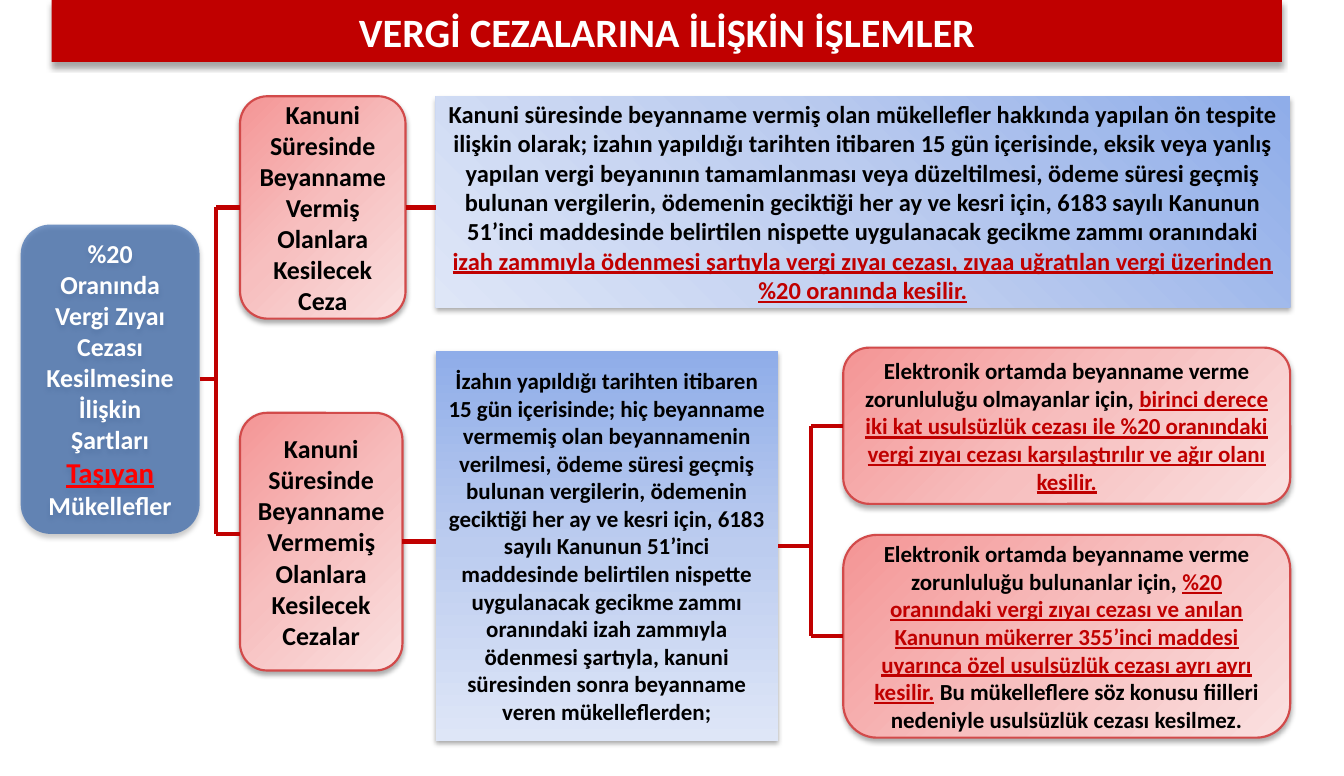
from copy import deepcopy

from lxml import etree
from pptx import Presentation
from pptx.dml.color import RGBColor
from pptx.enum import shapes, text
from pptx.oxml.ns import qn
from pptx.util import Inches, Pt

RED = RGBColor(0xC0, 0x00, 0x00)
BRIGHT_RED = RGBColor(0xFF, 0x00, 0x00)
STEEL = RGBColor(0x26, 0x5A, 0xA6)
PINK_EDGE = RGBColor(0xD2, 0x4A, 0x4A)
WHITE = RGBColor(0xFF, 0xFF, 0xFF)
BLACK = RGBColor(0x00, 0x00, 0x00)
PINKS = [RGBColor.from_string(c) for c in ("F49595", "F7BFBF", "FAE0E0")]
BLUES = [RGBColor.from_string(c) for c in ("8FADE9", "BCCCEF", "DEE6F7")]
RECT = shapes.MSO_SHAPE.RECTANGLE
ROUNDED = shapes.MSO_SHAPE.ROUNDED_RECTANGLE
LEFT, RIGHT = 1, 3
SOFT_SHADOW = (32, 3.5, 2.2)
TITLE_SHADOW = (35, 4, 3)


def add_child(parent, tag, **attributes):
    return etree.SubElement(parent, qn(tag), {k: str(v) for k, v in attributes.items()})


def add_shadow(shape, alpha, blur, distance):
    shape.shadow.inherit = False
    effects = shape._element.spPr.find(qn("a:effectLst"))
    shadow = add_child(effects, "a:outerShdw", blurRad=Pt(blur), dist=Pt(distance),
                       dir=90 * 60000, rotWithShape=0)
    color = add_child(shadow, "a:srgbClr", val=BLACK)
    add_child(color, "a:alpha", val=alpha * 1000)


def fill_gradient(shape, colors, angle):
    """Spread three colours evenly, with the angle measured clockwise."""
    shape.fill.gradient()
    shape.fill.gradient_angle = 360 - angle
    stops = shape._element.spPr.find(qn("a:gradFill")).find(qn("a:gsLst"))
    stops.insert(1, deepcopy(stops[0]))
    for i, (stop, color) in enumerate(zip(shape.fill.gradient_stops, colors)):
        stop.position = i / 2
        stop.color.rgb = color


def add_box(slide, kind, box, size, runs, color=BLACK, shadow=SOFT_SHADOW):
    """Runs are plain strings, or (text, colour, size) for underlined emphasis."""
    shape = slide.shapes.add_shape(kind, *map(Inches, box))
    shape.line.fill.background()
    add_shadow(shape, *shadow)
    frame = shape.text_frame
    frame.word_wrap = True
    frame.vertical_anchor = text.MSO_ANCHOR.MIDDLE
    paragraph = frame.paragraphs[0]
    paragraph.alignment = text.PP_ALIGN.CENTER
    paragraph.font.name = "Calibri"
    for item in runs:
        emphasized = not isinstance(item, str)
        wording, run_color, run_size = item if emphasized else (item, color, size)
        run = paragraph.add_run()
        run.text = wording
        run.font.name = "Calibri"
        run.font.bold = True
        run.font.size = Pt(run_size)
        run.font.color.rgb = run_color
        if emphasized:
            run.font.underline = True
    return shape


def pink_box(slide, box, size, *runs):
    shape = add_box(slide, ROUNDED, box, size, runs)
    fill_gradient(shape, PINKS, 45)
    shape.line.color.rgb = PINK_EDGE
    shape.line.width = Pt(1.5)
    return shape


def blue_box(slide, box, size, angle, *runs):
    shape = add_box(slide, RECT, box, size, runs)
    fill_gradient(shape, BLUES, angle)
    return shape


def middle(shape):
    return shape.top + shape.height // 2


def link(slide, start, end, source=None, target=None):
    line = slide.shapes.add_connector(shapes.MSO_CONNECTOR.STRAIGHT, *start, *end)
    line.line.color.rgb = RED
    line.line.width = Pt(3)
    add_child(line._element.spPr, "a:effectLst")
    if source is not None:
        line.begin_connect(source, RIGHT)
    if target is not None:
        line.end_connect(target, LEFT)


def link_across(slide, source, neighbour):
    y = middle(source)
    link(slide, (source.left + source.width, y), (neighbour.left, y), source)


def bracket(slide, source, spine, upper, lower, lower_y=None):
    """Join a source to two boxes; lower_y moves the lower branch off the middle."""
    spine, y = Inches(spine), middle(source)
    top = middle(upper)
    bottom = middle(lower) if lower_y is None else Inches(lower_y)
    link(slide, (spine, top), (spine, bottom))
    link(slide, (source.left + source.width, y), (spine, y), source)
    link(slide, (spine, top), (upper.left, top), target=upper)
    link(slide, (spine, bottom), (lower.left, bottom),
         target=lower if lower_y is None else None)


def title_bar(slide, box):
    bar = add_box(slide, RECT, box, 28, ["VERGİ CEZALARINA İLİŞKİN İŞLEMLER"],
                  WHITE, TITLE_SHADOW)
    bar.fill.solid()
    bar.fill.fore_color.rgb = RED


def taxpayers(slide, box):
    root = add_box(slide, ROUNDED, box, 18, [
        "%20 Oranında Vergi Zıyaı Cezası Kesilmesine İlişkin Şartları ",
        ("Taşıyan", BRIGHT_RED, 20), " Mükellefler"], WHITE)
    root.fill.solid()
    root.fill.fore_color.rgb = STEEL
    color = root._element.spPr.find(qn("a:solidFill"))[0]
    add_child(color, "a:alpha", val=63000)
    return root


def declared_on_time(slide, box):
    x, y, w, h = box
    penalty = pink_box(slide, (x, y, 1.6, h), 18,
                       "Kanuni Süresinde Beyanname Vermiş Olanlara Kesilecek Ceza")
    terms = blue_box(
        slide, (x + 1.89, y, w - 1.89, h - 0.11), 17, 135,
        "Kanuni süresinde beyanname vermiş olan mükellefler hakkında yapılan ön tespite "
        "ilişkin olarak; izahın yapıldığı tarihten itibaren 15 gün içerisinde, eksik veya "
        "yanlış yapılan vergi beyanının tamamlanması veya düzeltilmesi, ödeme süresi geçmiş "
        "bulunan vergilerin, ödemenin geciktiği her ay ve kesri için, 6183 sayılı Kanunun "
        "51’inci maddesinde belirtilen nispette uygulanacak gecikme zammı oranındaki ",
        ("izah zammıyla ödenmesi şartıyla vergi zıyaı cezası, zıyaa uğratılan vergi "
         "üzerinden %20 oranında kesilir.", RED, 17))
    link_across(slide, penalty, terms)
    return penalty


def not_declared(slide, box):
    x, y, w, h = box
    penalties = pink_box(slide, (x, y + 0.63, 1.57, 2.49), 18,
                         "Kanuni Süresinde Beyanname Vermemiş Olanlara Kesilecek Cezalar")
    penalties.text_frame.margin_left = penalties.text_frame.margin_right = Inches(0.07)
    terms = blue_box(
        slide, (x + 1.89, y + 0.03, 3.31, h - 0.03), 16, 90,
        "İzahın yapıldığı tarihten itibaren 15 gün içerisinde; hiç beyanname vermemiş olan "
        "beyannamenin verilmesi, ödeme süresi geçmiş bulunan vergilerin, ödemenin geciktiği "
        "her ay ve kesri için, 6183 sayılı Kanunun 51’inci maddesinde belirtilen nispette "
        "uygulanacak gecikme zammı oranındaki izah zammıyla ödenmesi şartıyla, kanuni "
        "süresinden sonra beyanname veren mükelleflerden;")
    outcome_x, outcome_w = x + 5.83, w - 5.83
    optional = pink_box(
        slide, (outcome_x, y, outcome_w, 1.51), 16,
        "Elektronik ortamda beyanname verme zorunluluğu olmayanlar için, ",
        ("birinci derece iki kat usulsüzlük cezası ile %20 oranındaki vergi zıyaı cezası "
         "karşılaştırılır ve ağır olanı kesilir.", RED, 16))
    obliged = pink_box(
        slide, (outcome_x, y + 1.81, outcome_w, 1.96), 16,
        "Elektronik ortamda beyanname verme zorunluluğu bulunanlar için, ",
        ("%20 oranındaki vergi zıyaı cezası ve anılan Kanunun mükerrer 355’inci maddesi "
         "uyarınca özel usulsüzlük cezası ayrı ayrı kesilir.", RED, 16),
        " Bu mükelleflere söz konusu fiilleri nedeniyle usulsüzlük cezası kesilmez.")
    link_across(slide, penalties, terms)
    bracket(slide, terms, x + 5.52, optional, obliged)
    return penalties


def main():
    deck = Presentation()
    deck.slide_width, deck.slide_height = Inches(12.99), Inches(7.5)
    slide = deck.slides.add_slide(deck.slide_layouts[6])
    title_bar(slide, (0.5, 0, 11.89, 0.6))
    root = taxpayers(slide, (0.2, 2.17, 1.73, 2.99))
    on_time = declared_on_time(slide, (2.32, 0.93, 10.15, 2.15))
    late = not_declared(slide, (2.32, 3.36, 10.15, 3.8))
    bracket(slide, root, 2.09, on_time, late, lower_y=5.16)
    deck.save("out.pptx")


if __name__ == "__main__":
    main()
